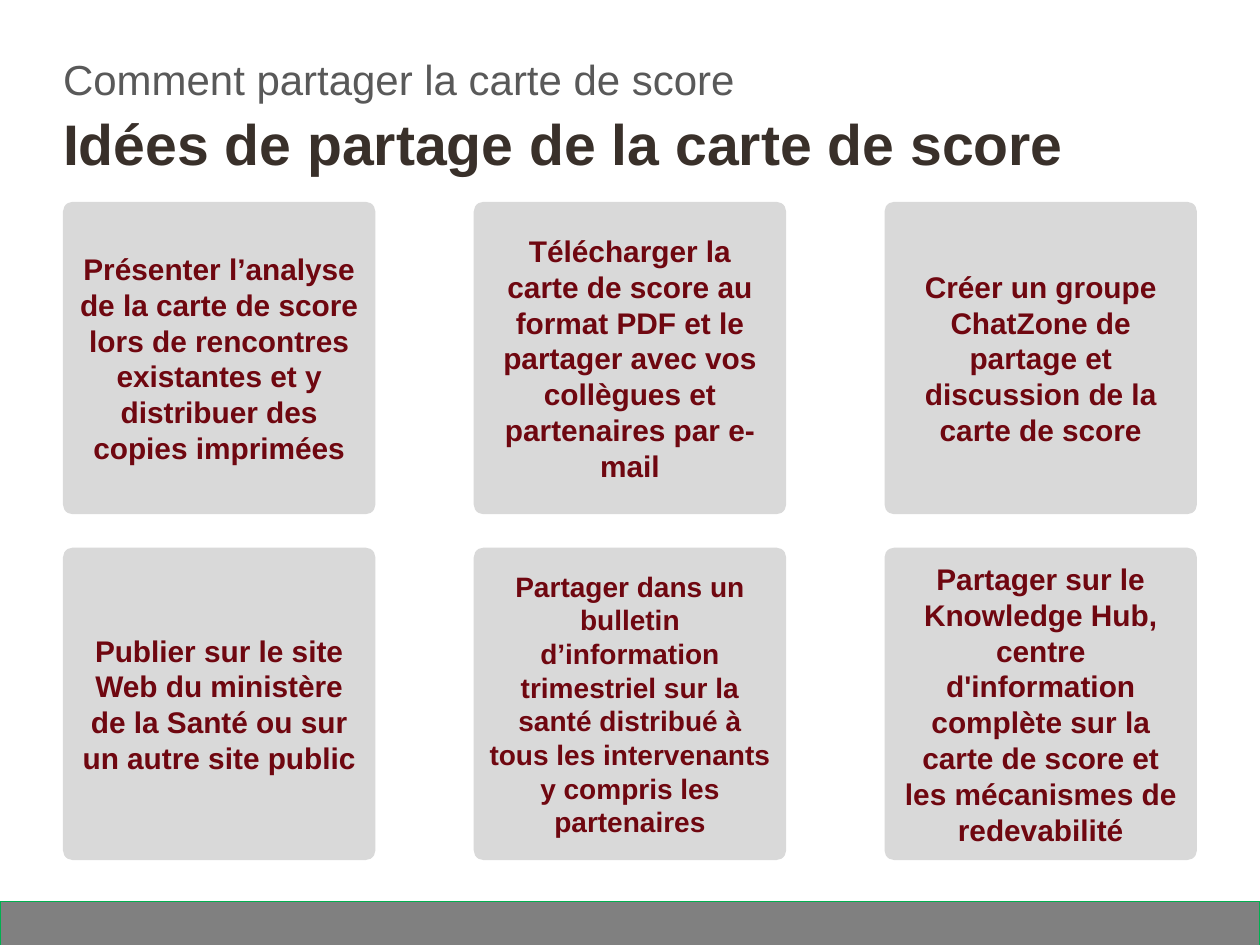
from pptx import Presentation
from pptx.dml.color import RGBColor
from pptx.enum.shapes import MSO_SHAPE
from pptx.enum.text import MSO_ANCHOR, PP_ALIGN
from pptx.util import Inches, Pt


def rgb(value):
    """Turn a hex string into a colour."""
    return RGBColor.from_string(value)


def write(tf, text, size, color, bold=False, align=PP_ALIGN.LEFT, spacing=1.0):
    """Write one formatted paragraph into a text frame."""
    tf.word_wrap = True
    p = tf.paragraphs[0]
    p.alignment = align
    p.line_spacing = spacing
    r = p.add_run()
    r.text = text
    r.font.name = "Arial"
    r.font.size = Pt(size)
    r.font.bold = bold
    r.font.color.rgb = rgb(color)


class Deck:
    """Hold the style and the current slide."""

    card_fill = "D9D9D9"
    card_text = "6F0710"

    def __init__(self, slide):
        """Keep the slide to draw on."""
        self.s = slide

    def shape(self, kind, x, y, w, h, fill, line=None):
        """Add a flat filled shape."""
        sp = self.s.shapes.add_shape(kind, Inches(x), Inches(y), Inches(w), Inches(h))
        sp.shadow.inherit = False
        sp.fill.solid()
        sp.fill.fore_color.rgb = rgb(fill)
        if line:
            sp.line.color.rgb = rgb(line)
            sp.line.width = Pt(0.75)
        else:
            sp.line.fill.background()
        return sp

    def heading(self, y, h, text, **fmt):
        """Add a heading without margins."""
        box = self.s.shapes.add_textbox(Inches(0.49), Inches(y), Inches(8.82), Inches(h))
        tf = box.text_frame
        tf.margin_left = tf.margin_right = tf.margin_top = tf.margin_bottom = 0
        write(tf, text, **fmt)

    def card(self, x, y, side, text, size):
        """Add a rounded square card with centred text."""
        sp = self.shape(MSO_SHAPE.ROUNDED_RECTANGLE, x, y, side, side, self.card_fill)
        sp.adjustments[0] = 0.031
        sp.text_frame.vertical_anchor = MSO_ANCHOR.MIDDLE
        write(sp.text_frame, text, size=size, color=self.card_text, bold=True,
              align=PP_ALIGN.CENTER)


IDEAS = [
    ("Présenter l’analyse de la carte de score lors de rencontres existantes "
     "et y distribuer des copies imprimées", 16.7),
    ("Télécharger la carte de score au format PDF et le partager avec vos "
     "collègues et partenaires par e-mail", 16.7),
    ("Créer un groupe ChatZone de partage et discussion de la carte de score", 16.7),
    ("Publier sur le site Web du ministère de la Santé ou sur un autre site public", 16.7),
    ("Partager dans un bulletin d’information trimestriel sur la santé distribué "
     "à tous les intervenants y compris les partenaires", 15.7),
    ("Partager sur le Knowledge Hub, centre d'information complète sur la carte "
     "de score et les mécanismes de redevabilité", 16.7),
]


def main():
    """Build and save the slide."""
    prs = Presentation()
    prs.slide_width, prs.slide_height = Inches(9.8), Inches(7.35)
    deck = Deck(prs.slides.add_slide(prs.slide_layouts[6]))
    deck.shape(MSO_SHAPE.RECTANGLE, 0, 7.01, 9.8, 0.37, "808080", "00B050")
    deck.heading(0.84, 0.54, "Idées de partage de la carte de score",
                 size=32, color="39302A", bold=True)
    deck.heading(0.46, 0.36, "Comment partager la carte de score",
                 size=23.5, color="595959", spacing=0.9)
    for i, (text, size) in enumerate(IDEAS):
        row, col = divmod(i, 3)
        deck.card(0.49 + 3.195 * col, 1.57 + 2.69 * row, 2.43, text, size)
    prs.save("out.pptx")


if __name__ == "__main__":
    main()
